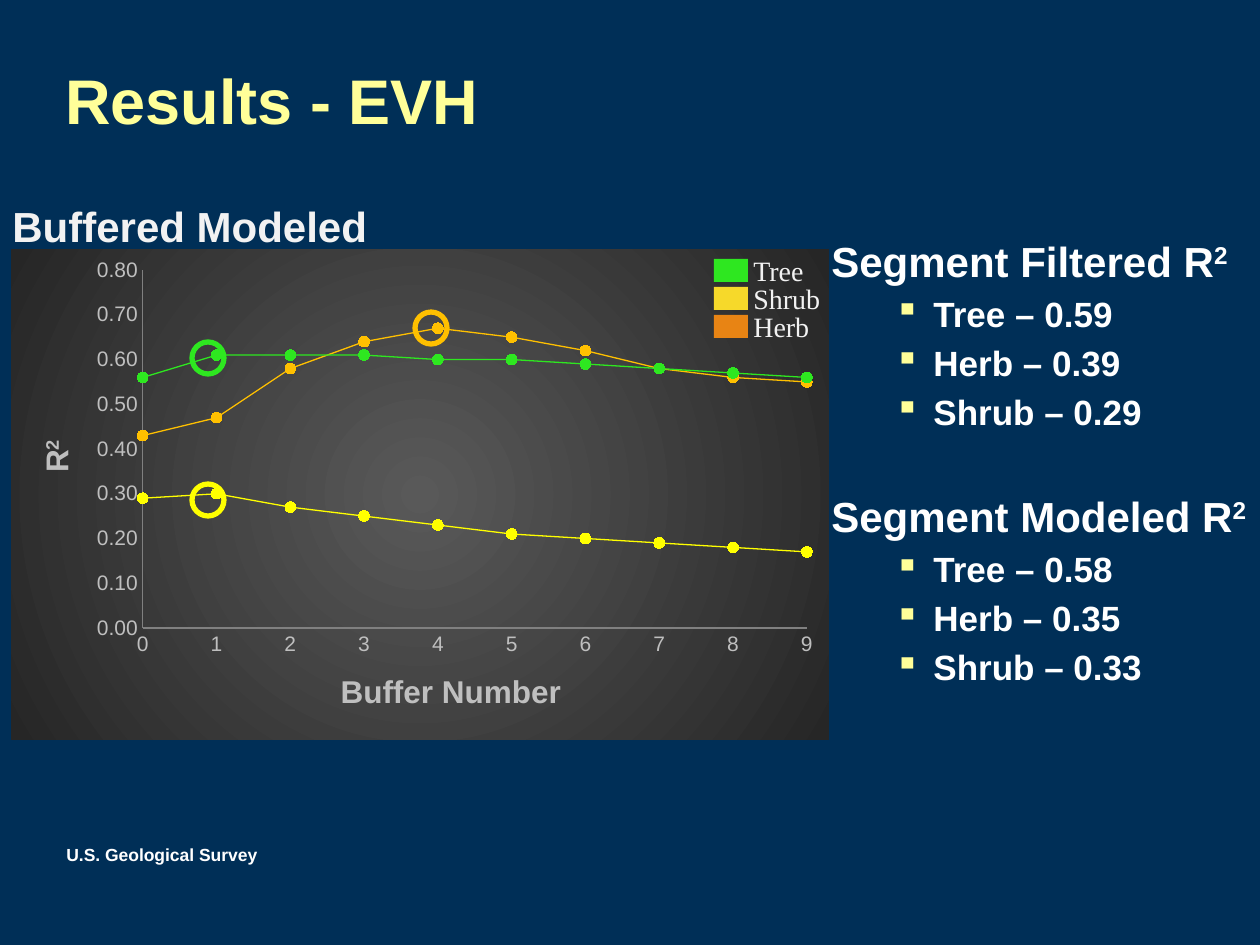
"""Build the EVH results slide with its buffered-model chart and segment scores."""
from lxml import etree
from pptx import Presentation
from pptx import util as u
from pptx.chart.data import XyChartData
from pptx.dml.color import RGBColor
from pptx.enum import chart as charts, shapes, text
from pptx.oxml import parse_xml
from pptx.oxml.ns import nsdecls, qn

PX = 914400 / 126
WHITE, PALE, YELLOW, GREY = "FFFFFF", "F2F2F2", "FFFF99", "BFBFBF"
CHART_BOX = (11, 249, 818, 491)
PLOT = (143, 270, 664, 358)
LABELS = [
    ("U.S. Geological Survey", (54, 837, 217, 34), 10, WHITE),
    ("Results - EVH", (53, 20, 1144, 158), 36, YELLOW),
    ("Buffered Modeled", (0, 194, 383, 63), 24, PALE),
]
SERIES = [
    ("Tree", "2EE720", [0.56, 0.61, 0.61, 0.61, 0.6, 0.6, 0.59, 0.58, 0.57, 0.56]),
    ("Herb", "FFC000", [0.43, 0.47, 0.58, 0.64, 0.67, 0.65, 0.62, 0.58, 0.56, 0.55]),
    ("Shrub", "FFFF00", [0.29, 0.3, 0.27, 0.25, 0.23, 0.21, 0.2, 0.19, 0.18, 0.17]),
]
PEAKS = [(192, 342, "2EE720"), (415, 312, "FFC000"), (192, 484, "FFFF00")]
LEGEND = [("Tree", "2EE720"), ("Shrub", "F6D92A"), ("Herb", "E88414")]
SCORES = [
    ("Segment Filtered R", ["Tree – 0.59", "Herb – 0.39", "Shrub – 0.29"]),
    ("Segment Modeled R", ["Tree – 0.58", "Herb – 0.35", "Shrub – 0.33"]),
]


def px(*values):
    return [u.Emu(round(value * PX)) for value in values]


def rgb(value):
    return RGBColor.from_string(value)


def set_all(target, **values):
    for name, value in values.items():
        setattr(target, name, value)


def style(font, size, color, bold=False, name="Arial"):
    set_all(font, size=u.Pt(size), bold=bold, name=name)
    font.color.rgb = rgb(color)


def add_run(paragraph, words, size, color, bold=True, name="Arial", raised=False):
    run = paragraph.add_run()
    run.text = words
    style(run.font, size, color, bold, name)
    if raised:
        run._r.get_or_add_rPr().set("baseline", "30000")


def add_box(slide, box, wrap=False):
    frame = slide.shapes.add_textbox(*px(*box)).text_frame
    set_all(frame, word_wrap=wrap, vertical_anchor=text.MSO_ANCHOR.TOP)
    return frame


def add_shape(slide, kind, box, fill=None, line=None):
    shape = slide.shapes.add_shape(kind, *px(*box))
    shape.shadow.inherit = False
    if fill:
        shape.fill.solid()
        shape.fill.fore_color.rgb = rgb(fill)
    else:
        shape.fill.background()
    if line:
        shape.line.color.rgb = rgb(line)
        shape.line.width = u.Pt(3)
    else:
        shape.line.fill.background()


def place(parent, index, left, top, width=None, height=None):
    layout = parent.find(qn("c:layout"))
    if layout is None:
        layout = etree.Element(qn("c:layout"))
        parent.insert(index, layout)
    manual = etree.SubElement(layout, qn("c:manualLayout"))
    chart_left, chart_top, chart_width, chart_height = CHART_BOX
    values = [("xMode", "edge"), ("yMode", "edge"),
              ("x", round((left - chart_left) / chart_width, 3)),
              ("y", round((top - chart_top) / chart_height, 3))]
    if width:
        values.insert(0, ("layoutTarget", "inner"))
        values += [("w", round(width / chart_width, 3)), ("h", round(height / chart_height, 3))]
    for tag, value in values:
        etree.SubElement(manual, qn("c:" + tag)).set("val", str(value))


def format_axis(axis, maximum, step, number_format, title, raised, corner):
    set_all(axis, minimum_scale=0, maximum_scale=maximum, major_unit=step,
            has_major_gridlines=False, has_minor_gridlines=False,
            major_tick_mark=charts.XL_TICK_MARK.NONE, minor_tick_mark=charts.XL_TICK_MARK.NONE)
    set_all(axis.tick_labels, number_format=number_format, number_format_is_linked=False)
    style(axis.tick_labels.font, 12, GREY)
    axis.format.line.color.rgb = rgb("808080")
    axis.format.line.width = u.Pt(0.75)
    paragraph = axis.axis_title.text_frame.paragraphs[0]
    add_run(paragraph, title, 18, GREY)
    if raised:
        add_run(paragraph, raised, 18, GREY, raised=True)
    element = axis.axis_title._element
    place(element, 1, *corner)
    if raised:
        body = element.find(".//" + qn("a:bodyPr"))
        body.set("rot", "-5400000")
        body.set("vert", "horz")


def add_results_chart(slide):
    data = XyChartData()
    for name, _, values in SERIES:
        series = data.add_series(name)
        for buffer_number, value in enumerate(values):
            series.add_data_point(buffer_number, value)
    chart = slide.shapes.add_chart(charts.XL_CHART_TYPE.XY_SCATTER_LINES, *px(*CHART_BOX), data).chart
    set_all(chart, has_legend=False, has_title=False)
    style(chart.font, 10, "000000")
    chart.plots[0].vary_by_categories = False
    for series, (_, color, _) in zip(chart.plots[0].series, SERIES):
        series.smooth = False
        series.format.line.color.rgb = rgb(color)
        series.format.line.width = u.Pt(0.75)
        set_all(series.marker, style=charts.XL_MARKER_STYLE.CIRCLE, size=6)
        series.marker.format.fill.solid()
        series.marker.format.fill.fore_color.rgb = rgb(color)
        series.marker.format.line.color.rgb = rgb(color)
    format_axis(chart.category_axis, 9, 1, "0", "Buffer Number", None, (335, 665))
    format_axis(chart.value_axis, 0.8, 0.1, "0.00", "R", "2", (33, 436))
    space = chart._chartSpace
    place(space.find(".//" + qn("c:plotArea")), 0, *PLOT)
    space.find(qn("c:chart")).addnext(parse_xml(
        f'<c:spPr {nsdecls("c", "a")}><a:gradFill><a:gsLst>'
        '<a:gs pos="0"><a:srgbClr val="595959"/></a:gs>'
        '<a:gs pos="100000"><a:srgbClr val="262626"/></a:gs></a:gsLst>'
        '<a:path path="circle"><a:fillToRect l="50000" t="50000" r="50000" b="50000"/></a:path>'
        '</a:gradFill><a:ln><a:noFill/></a:ln></c:spPr>'))


def add_bullet(paragraph):
    properties = paragraph._p.get_or_add_pPr()
    properties.set("marL", str(u.Inches(0.81)))
    properties.set("indent", str(u.Inches(-0.31)))
    color = etree.SubElement(properties, qn("a:buClr"))
    etree.SubElement(color, qn("a:srgbClr")).set("val", YELLOW)
    etree.SubElement(properties, qn("a:buSzPct")).set("val", "100000")
    etree.SubElement(properties, qn("a:buChar")).set("char", "▪")


def add_scores(slide):
    frame = add_box(slide, (819, 229, 451, 520), wrap=True)
    for number, (heading, items) in enumerate(SCORES):
        paragraph = frame.add_paragraph() if number else frame.paragraphs[0]
        if number:
            paragraph.space_before = u.Pt(33)
        add_run(paragraph, heading, 24, WHITE)
        add_run(paragraph, "2", 24, WHITE, raised=True)
        for item in items:
            paragraph = frame.add_paragraph()
            add_bullet(paragraph)
            set_all(paragraph, level=1, space_before=u.Pt(4))
            add_run(paragraph, item, 20, WHITE)


def main():
    presentation = Presentation()
    presentation.slide_width, presentation.slide_height = px(1260, 945)
    slide = presentation.slides.add_slide(presentation.slide_layouts[6])
    slide.background.fill.solid()
    slide.background.fill.fore_color.rgb = rgb("002F57")
    for words, box, size, color in LABELS:
        frame = add_box(slide, box)
        frame.vertical_anchor = text.MSO_ANCHOR.MIDDLE
        add_run(frame.paragraphs[0], words, size, color)
    add_results_chart(slide)
    for left, top, color in PEAKS:
        add_shape(slide, shapes.MSO_SHAPE.OVAL, (left, top, 32, 32), line=color)
    for row, (name, color) in enumerate(LEGEND):
        top = 259 + 28 * row
        add_shape(slide, shapes.MSO_SHAPE.RECTANGLE, (714, top, 34, 23), fill=color)
        frame = add_box(slide, (741, top - 12, 110, 47))
        paragraph = frame.paragraphs[0]
        paragraph.alignment = text.PP_ALIGN.LEFT
        add_run(paragraph, name, 16, PALE, False, "Times New Roman")
    add_scores(slide)
    presentation.save("out.pptx")


if __name__ == "__main__":
    main()
